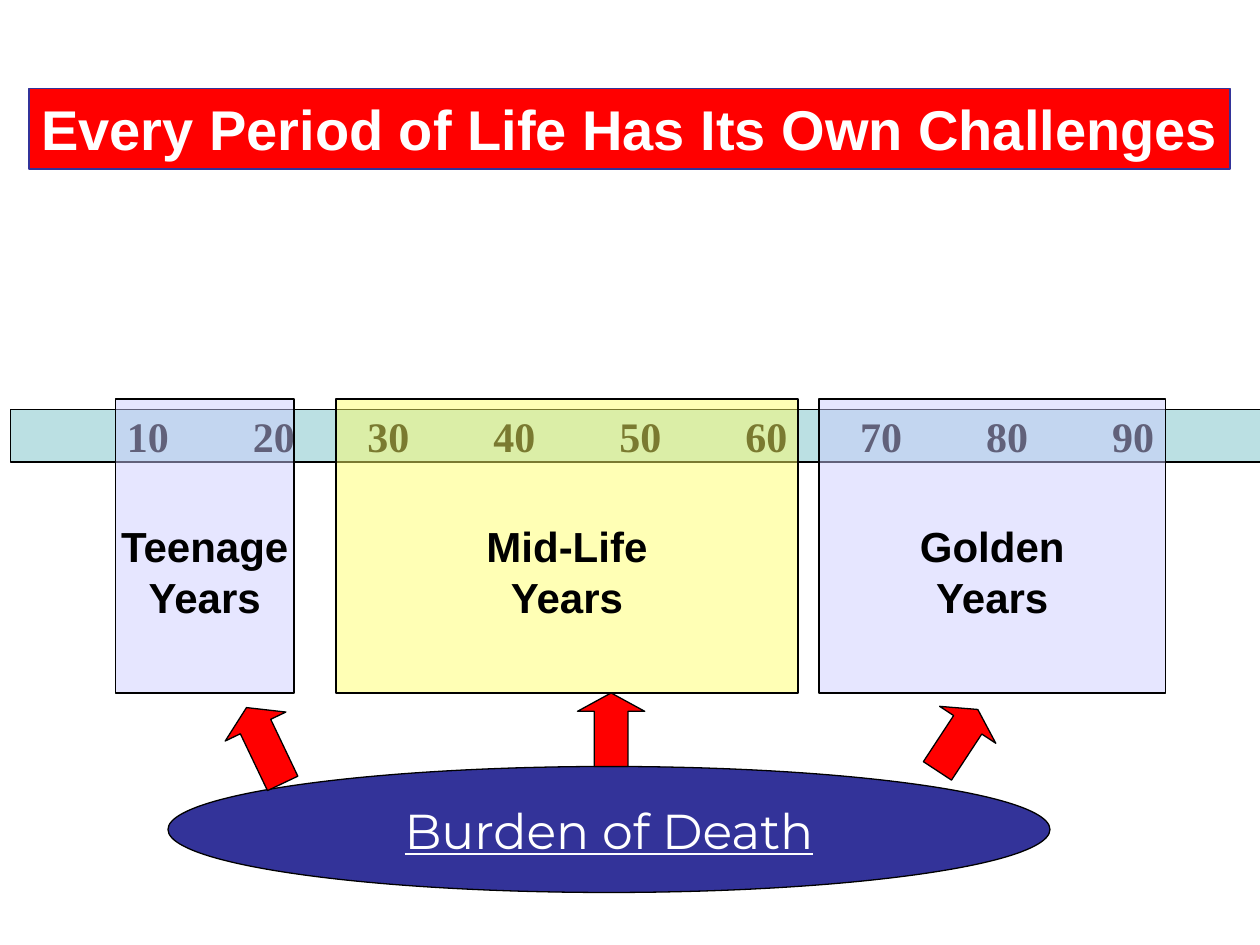
from lxml.etree import SubElement
from pptx import Presentation
from pptx.dml.color import RGBColor
from pptx.enum.shapes import MSO_SHAPE as Shape
from pptx.enum.text import MSO_ANCHOR as Anchor, PP_ALIGN as Align
from pptx.oxml.ns import qn
from pptx.util import Inches, Pt

COLORS = {"red": "FF0000", "navy": "333399", "teal": "BBE0E3", "lilac": "CCCCFF",
          "yellow": "FFFF66", "black": "000000", "white": "FFFFFF"}

deck = Presentation()
deck.slide_width, deck.slide_height = Inches(10), Inches(7.5)
page = deck.slides.add_slide(deck.slide_layouts[6])
cell = deck.slide_width / 120


def add_box(kind, column, row, columns, rows, fill, line="black"):
    box = page.shapes.add_shape(kind, *(round(n * cell) for n in (column, row, columns, rows)))
    box.shadow.inherit = False
    box.fill.solid()
    box.fill.fore_color.rgb = RGBColor.from_string(COLORS[fill])
    box.line.color.rgb = RGBColor.from_string(COLORS[line])
    box.line.width = Pt(0.75)
    return box


def write(box, text, size, font, color, align=Align.CENTER, bold=True):
    box.text_frame.text = text
    for para in box.text_frame.paragraphs:
        para.alignment = align
        for span in para.runs:
            span.font.size, span.font.name, span.font.bold = Pt(size), font, bold
            span.font.color.rgb = RGBColor.from_string(COLORS[color])


title = add_box(Shape.RECTANGLE, 2.75, 8.4, 114.4, 7.7, "red", "navy")
title.text_frame.word_wrap = True
title.text_frame.vertical_anchor = Anchor.TOP
title.text_frame.margin_right = 0
write(title, "Every Period of Life Has Its Own Challenges", 32, "Arial", "white", Align.LEFT)

timeline = add_box(Shape.RECTANGLE, 1, 39, 120, 5, "teal")
timeline.text_frame.margin_left = 0
ages = range(10, 100, 10)
write(timeline, "".join(f"\t{age}" for age in ages), 24, "Times New Roman", "black", Align.LEFT)
properties = timeline.text_frame.paragraphs[0]._p.get_or_add_pPr()
stops = SubElement(properties, qn("a:tabLst"))
for age in ages:
    position = age / 10 + 0.09 - 0.09 * ((age >= 30) + (age >= 70))
    SubElement(stops, qn("a:tab"), pos=str(Inches(position)), algn="ctr")

periods = [("Teenage", 11, 17, "lilac"), ("Golden", 78, 33, "lilac"), ("Mid-Life", 32, 44, "yellow")]
for name, column, columns, fill in periods:
    period = add_box(Shape.RECTANGLE, column, 38, columns, 28, fill)
    color = period.fill._xPr.find(qn("a:solidFill"))[0]
    SubElement(color, qn("a:alpha"), val="48000")
    frame = period.text_frame
    frame.word_wrap = False
    frame.vertical_anchor = Anchor.MIDDLE
    frame.margin_top = Inches(0.45)
    write(period, f"{name}\nYears", 24, "Arial", "black")

burden = add_box(Shape.OVAL, 16, 73, 84, 12, "navy")
write(burden, "Burden of Death", 28, "Montserrat", "white", bold=False)
burden.text_frame.paragraphs[0].runs[0].font.underline = True

for column, row, rows, angle in [(22, 67, 8, 334.5), (55, 66, 7, 0), (88, 67, 7, 33.3)]:
    arrow = add_box(Shape.UP_ARROW, column, row, 6.4, rows, "red")
    arrow.adjustments[1] = 0.25 * rows / 6.4
    arrow.rotation = angle

deck.save("out.pptx")
